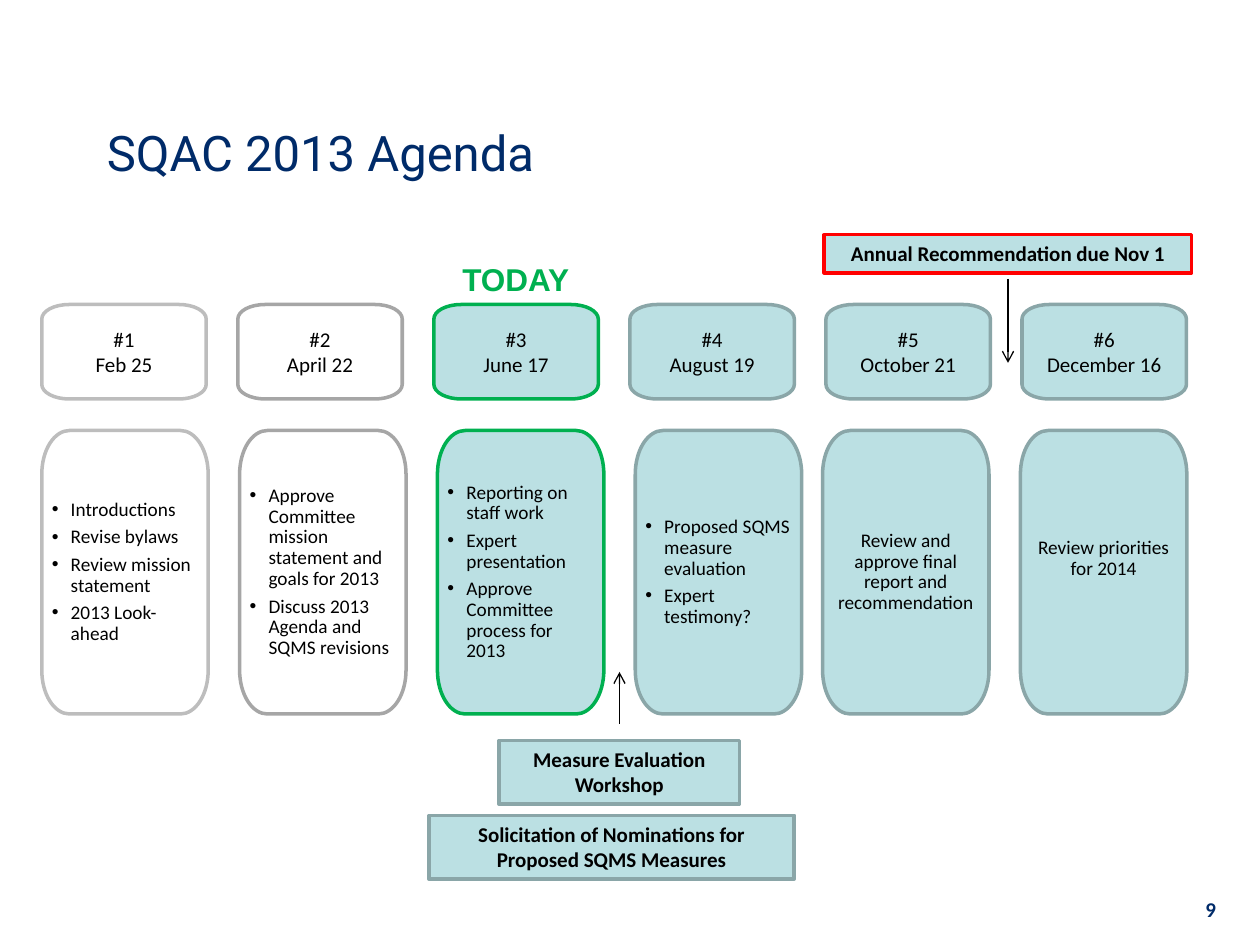
"""Build the agenda slide: six meetings with their topics and key dates."""
import dataclasses
import math

import lxml.etree
import pptx
import pptx.dml.color
import pptx.enum.shapes
import pptx.enum.text
import pptx.oxml.ns
import pptx.util

ALIGN = pptx.enum.text.PP_ALIGN
ANCHOR = pptx.enum.text.MSO_ANCHOR
FIT = pptx.enum.text.MSO_AUTO_SIZE
NAME = pptx.oxml.ns.qn
UNIT = pptx.util.Inches(10) / 120


@dataclasses.dataclass(frozen=True)
class Theme:
    """Colours, fonts and type sizes of the slide."""
    navy: str = "002B69"
    black: str = "000000"
    white: str = "FFFFFF"
    teal: str = "BBE0E3"
    edge: str = "8AA6A8"
    green: str = "00B050"
    red: str = "FF0000"
    light: str = "BDBDBD"
    gray: str = "A6A6A6"
    font: str = "Calibri"
    head: str = "Roboto"
    sans: str = "Arial"
    title: int = 28
    flag: int = 18
    label: int = 12
    small: int = 11


THEME = Theme()

MEETINGS = [
    ("Feb 25", THEME.white, THEME.light,
     ["Introductions", "Revise bylaws", "Review mission statement", "2013 Look-ahead"]),
    ("April 22", None, THEME.gray,
     ["Approve Committee mission statement and goals for 2013",
      "Discuss 2013 Agenda and SQMS revisions"]),
    ("June 17", THEME.teal, THEME.green,
     ["Reporting on staff work", "Expert presentation",
      "Approve Committee process for 2013"]),
    ("August 19", THEME.teal, THEME.edge,
     ["Proposed SQMS measure evaluation", "Expert testimony?"]),
    ("October 21", THEME.teal, THEME.edge,
     ["Review and approve final report and recommendation"]),
    ("December 16", THEME.teal, THEME.edge, ["Review priorities for 2014"]),
]


def grid(*cells):
    """Turn grid columns and rows into lengths."""
    return [pptx.util.Emu(round(cell * UNIT)) for cell in cells]


def tint(hue):
    """Return the colour object for a hex string."""
    return pptx.dml.color.RGBColor.from_string(hue)


def paint(shape, fill, line):
    """Set a shape's fill and outline, and drop its shadow."""
    shape.shadow.inherit = False
    if fill:
        shape.fill.solid()
        shape.fill.fore_color.rgb = tint(fill)
    else:
        shape.fill.background()
    shape.line.color.rgb = tint(line)
    shape.line.width = pptx.util.Pt(2)


def write(shape, lines, size, hue=THEME.black, font=THEME.font, bold=False,
          align=ALIGN.CENTER, anchor=ANCHOR.MIDDLE):
    """Fill a shape with paragraphs in one type style."""
    frame = shape.text_frame
    frame.word_wrap = True
    frame.vertical_anchor = anchor
    frame.text = "\n".join(lines)
    for para in frame.paragraphs:
        para.alignment = align
        for run in para.runs:
            run.font.name = font
            run.font.size = pptx.util.Pt(size)
            run.font.bold = bold
            run.font.color.rgb = tint(hue)
    return frame


def bullet(para):
    """Give a paragraph a hanging round bullet."""
    props = para._p.get_or_add_pPr()
    props.set("marL", str(pptx.util.Inches(0.15)))
    props.set("indent", str(-pptx.util.Inches(0.15)))
    lxml.etree.SubElement(props, NAME("a:buFont")).set("typeface", THEME.sans)
    lxml.etree.SubElement(props, NAME("a:buChar")).set("char", "•")


def bend(line, spots):
    """Turn a line segment of an outline into a curve through two handles."""
    line.tag = NAME("a:cubicBezTo")
    for index, (across, down) in enumerate(spots):
        spot = lxml.etree.Element(NAME("a:pt"), x=str(across), y=str(down))
        line.insert(index, spot)


def card(slide, left, top, width, height, fill, line):
    """Draw a box whose corners are quarter ellipses of two curves each."""
    wide, tall = width / 6, height * 0.155
    near, far, high, low = wide, width - wide, tall, height - tall
    mids = [(near, high), (far, high), (far, low), (near, low)]
    pull = 4 / 3 * math.tan(math.pi / 16)

    def spot(mid, angle, reach=0):
        """Find a point on a corner, moved along its tangent by reach."""
        return (mid[0] + wide * (math.cos(angle) - reach * math.sin(angle)),
                mid[1] + tall * (math.sin(angle) + reach * math.cos(angle)))

    points, curves = [], {}
    for turn, mid in enumerate(mids):
        for step in range(3):
            angle = math.pi * (1 + turn / 2 + step / 4)
            if step:
                curves[len(points)] = [grid(*spot(mid, angle - math.pi / 4, pull)),
                                       grid(*spot(mid, angle, -pull))]
            across, down = spot(mid, angle)
            points.append(grid(left + across, top + down))
    pen = slide.shapes.build_freeform(*points[0])
    pen.add_line_segments(points[1:], close=True)
    shape = pen.convert_to_shape()
    lines = list(shape._element.iter(NAME("a:lnTo")))
    for index, spots in curves.items():
        bend(lines[index - 1], spots)
    paint(shape, fill, line)
    frame = shape.text_frame
    frame.margin_left = frame.margin_right = pptx.util.Inches(0.08)
    frame.margin_top = frame.margin_bottom = pptx.util.Inches(0.08)
    return shape


def topic(slide, col, fill, line, lines):
    """Add the topic card of one meeting."""
    shift = 1 if col > 3 else 0
    shape = card(slide, 3.98 + 18.84 * col - shift, 41, 15.85, 27, fill, line)
    listed = len(lines) > 1
    frame = write(shape, lines, THEME.small, align=ALIGN.LEFT if listed else ALIGN.CENTER)
    for para in frame.paragraphs:
        para.line_spacing = 0.9
        para.space_after = pptx.util.Pt(THEME.small * 0.35)
        if listed:
            bullet(para)
    return frame


def date(slide, col, fill, line, day):
    """Add the date card of one meeting."""
    shape = card(slide, 3.98 + 18.67 * col, 29, 15.66, 9, fill, line)
    write(shape, [f"#{col + 1}", day], THEME.label)


def note(slide, text, place, line=THEME.edge):
    """Add a square box with a bold label."""
    kind = pptx.enum.shapes.MSO_SHAPE.RECTANGLE
    shape = slide.shapes.add_shape(kind, *grid(*place))
    paint(shape, THEME.teal, line)
    frame = write(shape, [text], THEME.label, bold=True, anchor=ANCHOR.TOP)
    frame.auto_size = FIT.SHAPE_TO_FIT_TEXT


def arrow(slide, col, start, end):
    """Draw an upright arrow in a column from start row to end row."""
    kind = pptx.enum.shapes.MSO_CONNECTOR.STRAIGHT
    link = slide.shapes.add_connector(kind, *grid(col, start, col, end))
    link.line.color.rgb = tint(THEME.black)
    link.line.width = pptx.util.Pt(0.75)
    lxml.etree.SubElement(link.line._get_or_add_ln(), NAME("a:tailEnd")).set("type", "arrow")
    lxml.etree.SubElement(link._element.spPr, NAME("a:effectLst"))


def label(slide, text, place, size, **style):
    """Add a plain line of text."""
    shape = slide.shapes.add_textbox(*grid(*place))
    return write(shape, [text], size, **style)


def main():
    """Build the slide and save it."""
    deck = pptx.Presentation()
    deck.slide_width, deck.slide_height = grid(120, 90)
    slide = deck.slides.add_slide(deck.slide_layouts[6])
    label(slide, "9", (92, 85, 25, 3.25), THEME.label, hue=THEME.navy, bold=True,
          align=ALIGN.RIGHT)
    label(slide, "SQAC 2013 Agenda", (9, 8, 102, 13), THEME.title, hue=THEME.navy,
          font=THEME.head, align=ALIGN.LEFT)
    for col, (day, fill, line, lines) in enumerate(MEETINGS):
        frame = topic(slide, col, fill, line, lines)
        date(slide, col, fill, line, day)
    frame.margin_bottom = pptx.util.Inches(0.3)
    note(slide, "Annual Recommendation due Nov 1", (78.5, 22.35, 35, 3.64), THEME.red)
    arrow(slide, 96, 26.56, 34.56)
    note(slide, "Solicitation of Nominations for Proposed SQMS Measures",
         (40.85, 77.66, 34.8, 6.05))
    arrow(slide, 59, 68.95, 64)
    flag = label(slide, "TODAY", (42.85, 24.15, 12.6, 4.85), THEME.flag, hue=THEME.green,
                 font=THEME.sans, bold=True, align=ALIGN.LEFT, anchor=ANCHOR.TOP)
    flag.word_wrap = False
    flag.auto_size = FIT.SHAPE_TO_FIT_TEXT
    note(slide, "Measure Evaluation Workshop", (47.53, 70.52, 22.9, 6.05))
    deck.save("out.pptx")


if __name__ == "__main__":
    main()
